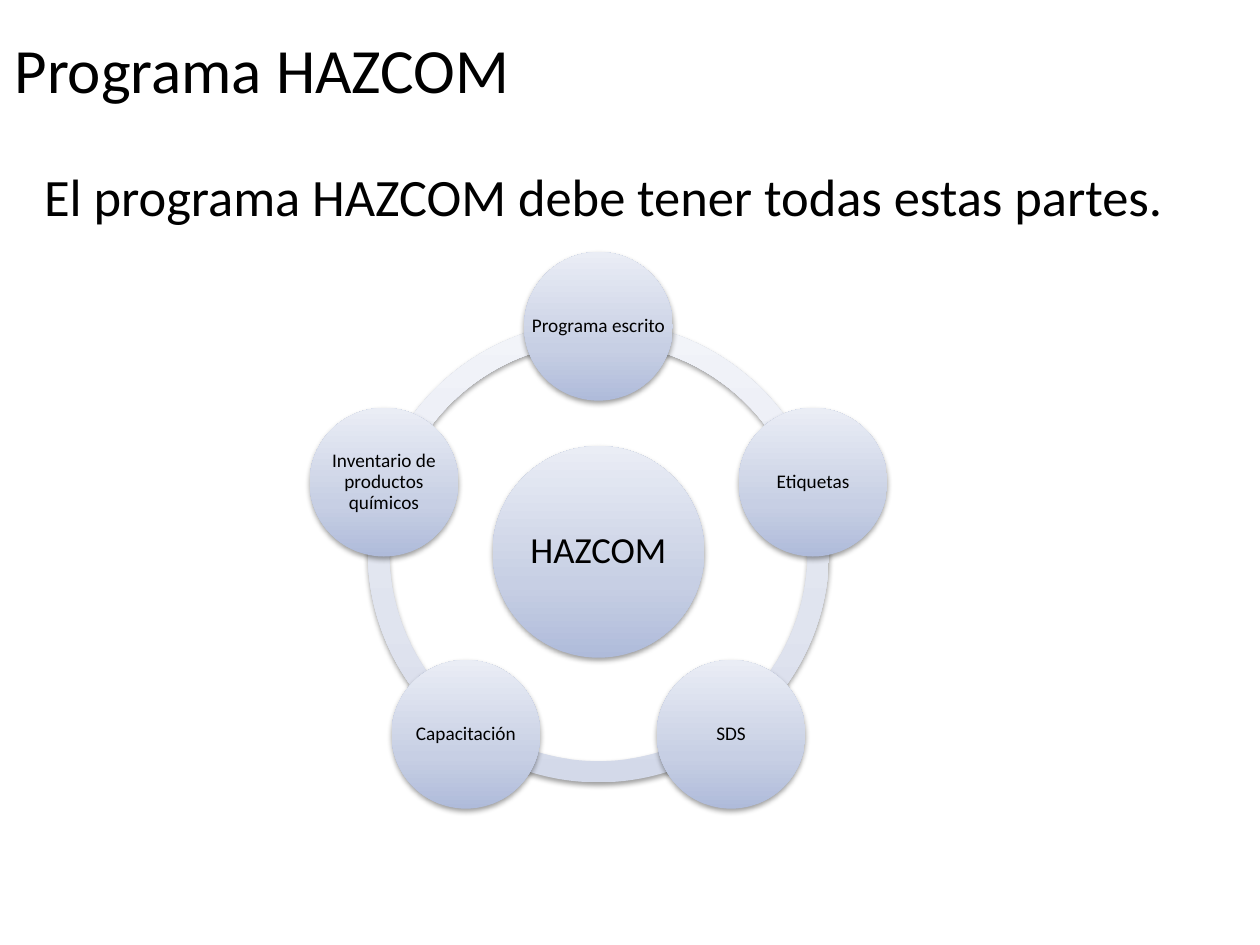
from math import cos, radians, sin

from lxml.etree import SubElement
from pptx import Presentation
from pptx.dml.color import RGBColor
from pptx.enum.shapes import MSO_SHAPE
from pptx.enum.text import MSO_ANCHOR, MSO_AUTO_SIZE, PP_ALIGN
from pptx.oxml.ns import qn
from pptx.util import Inches, Pt


def style_text(frame, text, size, color, align, anchor):
    frame.text = text
    frame.word_wrap = True
    frame.auto_size = MSO_AUTO_SIZE.NONE
    frame.vertical_anchor = anchor
    paragraph = frame.paragraphs[0]
    paragraph.alignment = align
    paragraph.space_before = Pt(0)
    font = paragraph.runs[0].font
    font.name, font.size = "Calibri", Pt(size)
    font.color.rgb = RGBColor.from_string(color)
    return paragraph


def add_shaded(preset, box, colors):
    shape = slide.shapes.add_shape(preset, *box)
    shape.line.fill.background()
    shape.fill.gradient()
    stops = shape.element.spPr.find(qn("a:gradFill")).find(qn("a:gsLst"))
    for stop in list(stops):
        stops.remove(stop)
    for position, color in zip((0, 35, 100), colors):
        stop = SubElement(stops, qn("a:gs"), pos=str(position * 1000))
        SubElement(stop, qn("a:srgbClr"), val=color)
    shape.fill.gradient_angle = 90
    shape.shadow.inherit = False
    effects = shape.element.spPr.find(qn("a:effectLst"))
    shadow = SubElement(effects, qn("a:outerShdw"), blurRad="40000",
                        dist="20000", dir="5400000", rotWithShape="0")
    shade = SubElement(shadow, qn("a:srgbClr"), val="000000")
    SubElement(shade, qn("a:alpha"), val="38000")
    return shape


INK = "000000"
RING_COLORS = ("D3D9E9", "E0E4EF", "F2F4F9")
CIRCLE_COLORS = ("AFBBDA", "C7CFE4", "EAEDF5")

prs = Presentation()
prs.slide_width, prs.slide_height = Inches(10), Inches(7.5)
slide = prs.slides.add_slide(prs.slide_layouts[1])

title = slide.shapes.title
title.left, title.top = Inches(-2.42), Inches(-0.08)
title.width, title.height = Inches(9), Inches(1.25)
style_text(title.text_frame, "Programa HAZCOM", 36, INK,
           PP_ALIGN.CENTER, MSO_ANCHOR.MIDDLE)

statement = slide.placeholders[1]
statement.left, statement.top = Inches(0.25), Inches(1.25)
statement.width, statement.height = Inches(9.75), Inches(4.95)
sentence = style_text(statement.text_frame,
                      "El programa HAZCOM debe tener todas estas partes.",
                      30, INK, PP_ALIGN.LEFT, MSO_ANCHOR.TOP)
properties = sentence._p.get_or_add_pPr()
properties.set("marL", "0")
properties.set("indent", "0")
SubElement(properties, qn("a:buNone"))

center_x, center_y = Inches(4.75), Inches(4.38)
ring_size, orbit = Inches(3.66), Inches(1.79)
parts = ["Programa escrito", "Etiquetas", "SDS", "Capacitación",
         "Inventario de productos químicos"]
step = 360 / len(parts)
angles = [(270 + step * index) % 360 for index in range(len(parts))]

for angle in angles:
    arc = add_shaded(MSO_SHAPE.BLOCK_ARC,
                     (center_x - ring_size // 2, center_y - ring_size // 2,
                      ring_size, ring_size), RING_COLORS)
    arc.adjustments[0] = angle * 0.6
    arc.adjustments[1] = (angle + step) % 360 * 0.6
    arc.adjustments[2] = 0.046

circles = [("HAZCOM", 0, 0, 1.68, 21, 0.03)]
for part, angle in zip(parts, angles):
    circles.append((part, orbit * cos(radians(angle)),
                    orbit * sin(radians(angle)), 1.18, 11, 0.02))

for text, offset_x, offset_y, diameter, size, inset in circles:
    side = Inches(diameter)
    box = (int(center_x + offset_x - side / 2),
           int(center_y + offset_y - side / 2), side, side)
    add_shaded(MSO_SHAPE.OVAL, box, CIRCLE_COLORS)
    frame = slide.shapes.add_textbox(*box).text_frame
    frame.margin_left = frame.margin_right = Inches(inset)
    frame.margin_top = frame.margin_bottom = Inches(inset)
    label = style_text(frame, text, size, INK,
                       PP_ALIGN.CENTER, MSO_ANCHOR.MIDDLE)
    label.line_spacing = 0.9

prs.save("out.pptx")
